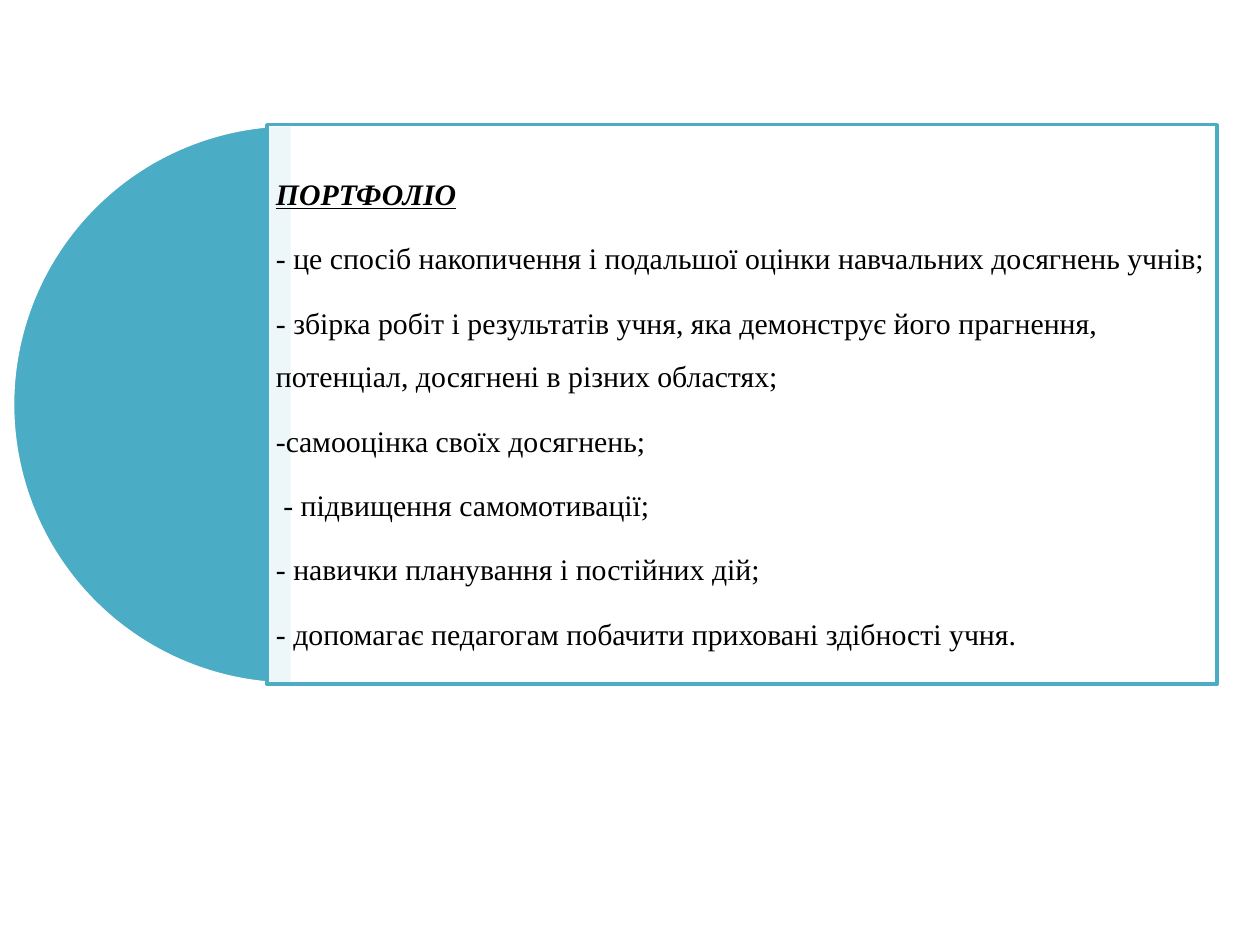
"""Build a slide that defines a school portfolio beside a half circle."""
from lxml.etree import SubElement
from pptx import Presentation
from pptx.dml.color import RGBColor
from pptx.enum.shapes import MSO_SHAPE as Shape
from pptx.enum.text import MSO_ANCHOR as Anchor, PP_ALIGN as Align
from pptx.oxml.ns import qn
from pptx.util import Inches, Pt

TEAL, WHITE, BLACK = "4BACC6", "FFFFFF", "000000"
TITLE = "ПОРТФОЛІО"
POINTS = [
    "- це спосіб накопичення і подальшої оцінки навчальних досягнень учнів;",
    "- збірка робіт і результатів учня, яка демонструє його прагнення, "
    "потенціал, досягнені в різних областях;",
    "-cамооцінка своїх досягнень;",
    " - підвищення самомотивації;",
    "- навички планування і постійних дій;",
    "- допомагає педагогам побачити приховані здібності учня.",
]
WIDTH, HEIGHT = 10, 7.5
TOP, SIZE = 0.99, 4.44
PIE_LEFT, PANEL_LEFT, PANEL_WIDTH = 0.1, 2.12, 7.54
PIE_ANGLES = (54, 162)
PANEL_OPACITY = 90
FONT = {"name": "Times New Roman", "size": Pt(17)}
TITLE_FONT = {"bold": True, "italic": True, "underline": True}
PARAGRAPH = {"alignment": Align.LEFT, "line_spacing": 1.5, "space_after": Pt(6.2)}
MARGINS = {f"margin_{side}": Inches(0.07) for side in ("left", "top", "right", "bottom")}
FRAME = {"word_wrap": True, "vertical_anchor": Anchor.MIDDLE, **MARGINS}


def color(value):
    """Turn a hex string into a colour."""
    return RGBColor.from_string(value)


def apply(target, values):
    """Set each format value on the target."""
    for name, value in values.items():
        setattr(target, name, value)


def add_block(slide, kind, left, width, fill, line):
    """Add a filled and outlined shape in the shared row."""
    block = slide.shapes.add_shape(kind, *map(Inches, (left, TOP, width, SIZE)))
    block.shadow.inherit = False
    block.fill.solid()
    block.fill.fore_color.rgb = color(fill)
    block.line.color.rgb = color(line)
    block.line.width = Pt(2)
    return block


def write_panel(frame):
    """Write the underlined title and the points below it."""
    apply(frame, FRAME)
    for index, text in enumerate([TITLE, *POINTS]):
        para = frame.paragraphs[0] if index == 0 else frame.add_paragraph()
        apply(para, PARAGRAPH)
        span = para.add_run()
        span.text = text
        apply(span.font, FONT if index else {**FONT, **TITLE_FONT})
        span.font.color.rgb = color(BLACK)


def main():
    """Build and save the deck."""
    deck = Presentation()
    deck.slide_width, deck.slide_height = Inches(WIDTH), Inches(HEIGHT)
    slide = deck.slides.add_slide(deck.slide_layouts[6])
    half_circle = add_block(slide, Shape.PIE, PIE_LEFT, SIZE, TEAL, WHITE)
    for index, angle in enumerate(PIE_ANGLES):
        half_circle.adjustments[index] = angle
    panel = add_block(slide, Shape.RECTANGLE, PANEL_LEFT, PANEL_WIDTH, WHITE, TEAL)
    fill_color = panel.fill._xPr.find(qn("a:solidFill"))[0]
    SubElement(fill_color, qn("a:alpha"), val=str(PANEL_OPACITY * 1000))
    write_panel(panel.text_frame)
    deck.save("out.pptx")


if __name__ == "__main__":
    main()
